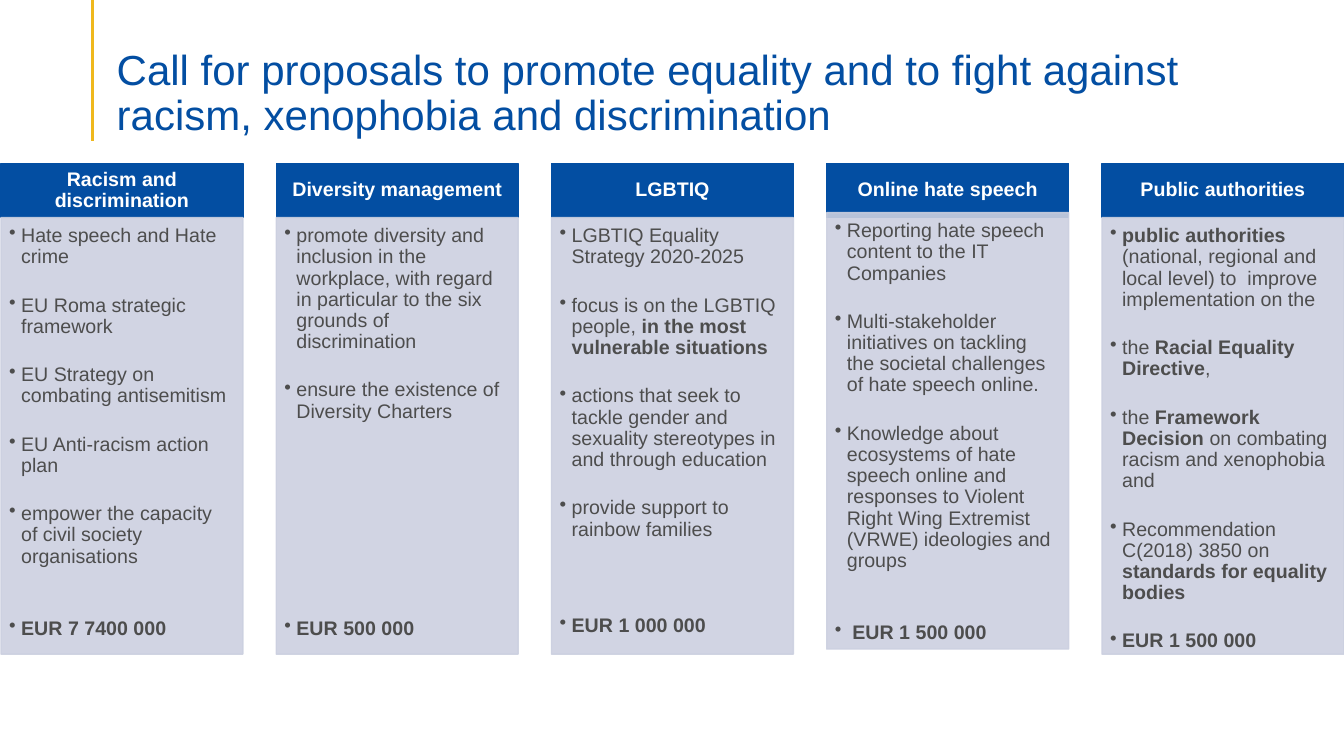
import pptx
import pptx.dml.color
import pptx.enum.shapes
import pptx.enum.text
import pptx.oxml.ns
import pptx.util
from lxml import etree

PX = 9144  # EMU per px, 100 px to the inch
COLORS = {"blue": "034EA2", "panel": "CCD0E0", "text": "4D4D4D",
          "white": "FFFFFF", "gold": "EFB81D"}

# Heading, panel top, blank lines above the budget, bullets (bold between asterisks)
COLUMNS = [
    ("Racism and discrimination", 216, 2, [
        "Hate speech and Hate crime",
        "EU Roma strategic framework",
        "EU Strategy on combating antisemitism",
        "EU Anti-racism action plan",
        "empower the capacity of civil society organisations",
        "*EUR 7 7400 000*"]),
    ("Diversity management", 216, 8, [
        "promote diversity and inclusion in the workplace, with regard "
        "in particular to the six grounds of discrimination",
        "ensure the existence of Diversity Charters",
        "*EUR 500 000*"]),
    ("LGBTIQ", 216, 3, [
        "LGBTIQ Equality Strategy 2020-2025",
        "focus is on the LGBTIQ people, *in the most vulnerable situations*",
        "actions that seek to tackle gender and sexuality stereotypes in "
        "and through education",
        "provide support to rainbow families",
        "*EUR 1 000 000*"]),
    ("Online hate speech", 211, 2, [
        "Reporting hate speech content to the IT Companies",
        "Multi-stakeholder initiatives on tackling the societal challenges "
        "of hate speech online.",
        "Knowledge about ecosystems of hate speech online and responses to "
        "Violent Right Wing Extremist (VRWE) ideologies and groups",
        "* EUR 1 500 000*"]),
    ("Public authorities", 216, 1, [
        "*public authorities *(national, regional and local level) to  improve "
        "implementation on the",
        "the *Racial Equality Directive*,",
        "the *Framework Decision *on combating racism and xenophobia and",
        "Recommendation C(2018) 3850 on *standards for equality bodies*",
        "*EUR 1 500 000*"]),
]


def rgb(name):
    return pptx.dml.color.RGBColor.from_string(COLORS[name])


def gap(lines):
    """Points of space that stand for a number of blank lines."""
    return 17.2 * lines + 2.2


class Slide:
    font = "Arial"
    line_spacing = 0.9

    def __init__(self, presentation):
        self.slide = presentation.slides.add_slide(presentation.slide_layouts[6])

    def line(self, x1, y1, x2, y2, color, width):
        connector = self.slide.shapes.add_connector(
            pptx.enum.shapes.MSO_CONNECTOR.STRAIGHT, x1 * PX, y1 * PX, x2 * PX, y2 * PX)
        connector.line.color.rgb = rgb(color)
        connector.line.width = pptx.util.Pt(width)
        etree.SubElement(connector._element.spPr, pptx.oxml.ns.qn("a:effectLst"))

    def box(self, x, y, width, height, color, opacity=100):
        shape = self.slide.shapes.add_shape(
            pptx.enum.shapes.MSO_SHAPE.RECTANGLE, x * PX, y * PX, width * PX, height * PX)
        shape.shadow.inherit = False
        shape.fill.solid()
        shape.fill.fore_color.rgb = rgb(color)
        shape.line.color.rgb = rgb(color)
        shape.line.width = pptx.util.Pt(1)
        if opacity < 100:
            for tint in shape._element.spPr.iter(pptx.oxml.ns.qn("a:srgbClr")):
                etree.SubElement(tint, pptx.oxml.ns.qn("a:alpha"), val=str(opacity * 1000))
        return shape

    def frame(self, shape, insets, anchor):
        frame = shape.text_frame
        frame.word_wrap = True
        frame.vertical_anchor = anchor
        (frame.margin_left, frame.margin_top,
         frame.margin_right, frame.margin_bottom) = [inset * PX for inset in insets]
        return frame

    def add_runs(self, paragraph, text, size, color,
                 align=pptx.enum.text.PP_ALIGN.LEFT):
        paragraph.alignment = align
        paragraph.line_spacing = self.line_spacing
        for index, part in enumerate(text.split("*")):
            if part:
                run = paragraph.add_run()
                run.text = part
                run.font.name = self.font
                run.font.size = pptx.util.Pt(size)
                run.font.bold = index % 2 == 1
                run.font.color.rgb = rgb(color)

    def title(self, x, y, width, height, text):
        shape = self.slide.shapes.add_textbox(x * PX, y * PX, width * PX, height * PX)
        frame = self.frame(shape, (10, 5, 10, 0), pptx.enum.text.MSO_ANCHOR.BOTTOM)
        self.add_runs(frame.paragraphs[0], text, 30, "blue")

    def heading(self, x, y, width, height, text):
        shape = self.box(x, y, width, height, "blue")
        frame = self.frame(shape, (11, 6, 11, 6), pptx.enum.text.MSO_ANCHOR.MIDDLE)
        self.add_runs(frame.paragraphs[0], f"*{text}*", 14, "white",
                      pptx.enum.text.PP_ALIGN.CENTER)

    def bullets(self, x, y, width, height, items, budget_lines):
        shape = self.box(x, y, width, height, "panel", opacity=90)
        frame = self.frame(shape, (8, 8, 11, 12), pptx.enum.text.MSO_ANCHOR.TOP)
        for index, item in enumerate(items):
            paragraph = frame.add_paragraph() if index else frame.paragraphs[0]
            properties = paragraph._p.get_or_add_pPr()
            properties.set("marL", str(12 * PX))
            properties.set("indent", str(-12 * PX))
            etree.SubElement(properties, pptx.oxml.ns.qn("a:buChar"), char="•")
            self.add_runs(paragraph, item, 14, "text")
            if index < len(items) - 1:
                lines = budget_lines if index == len(items) - 2 else 1
                paragraph.space_after = pptx.util.Pt(gap(lines))


def main():
    presentation = pptx.Presentation()
    presentation.slide_width = pptx.util.Inches(13.33)
    presentation.slide_height = pptx.util.Inches(7.5)
    slide = Slide(presentation)

    # Accent line and title
    slide.line(92, 0, 92, 140, "gold", 2.25)
    slide.title(106, 53, 1150, 86, "Call for proposals to promote equality and to fight "
                "against racism, xenophobia and discrimination")

    # Five priority columns
    for index, (heading, top, budget_lines, items) in enumerate(COLUMNS):
        left = 1 + 273 * index
        slide.heading(left, 162, 240, 54, heading)
        slide.bullets(left, top, 240, 433, items, budget_lines)

    presentation.save("out.pptx")


if __name__ == "__main__":
    main()
